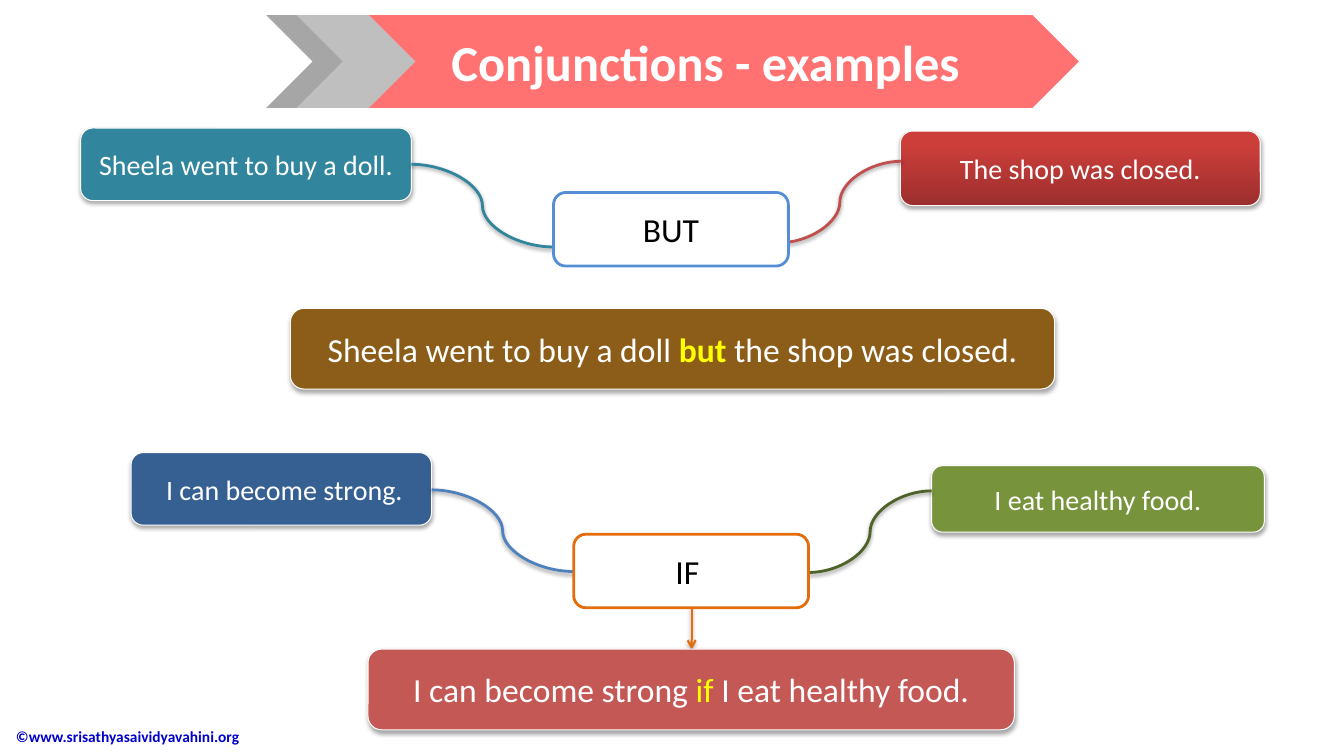
from lxml import etree
from pptx import Presentation
from pptx import util as u
from pptx.dml import color
from pptx.enum import shapes, text
from pptx.oxml import ns

COLORS = {
    "white": "FFFFFF", "black": "000000", "yellow": "FFFF00", "navy": "0000CC",
    "teal": "31859C", "red": "C0504D", "deep_red": "9C2F2D", "bright_red": "CB3E3A",
    "brown": "8C5D18", "sky": "558ED5", "dark_blue": "376092", "blue": "4F81BD",
    "green": "77933C", "dark_green": "4F6228", "orange": "E46C0A", "rose": "C35855",
    "coral": "FF7271", "gray": "A6A6A6", "light_gray": "BFBFBF",
}


class ExampleSlide:
    """Draws the elements of a conjunction slide in one shared style."""

    font_name = "Calibri"

    def __init__(self, presentation):
        self.slide = presentation.slides.add_slide(presentation.slide_layouts[6])

    def rgb(self, name):
        return color.RGBColor.from_string(COLORS[name])

    def shadow(self, element, opacity=35, distance=1.8):
        properties = element._element.spPr
        effects = properties.find(ns.qn("a:effectLst"))
        if effects is None:
            effects = etree.SubElement(properties, ns.qn("a:effectLst"))
        outer = etree.SubElement(effects, ns.qn("a:outerShdw"), {
            "blurRad": str(u.Pt(3.1)), "dist": str(u.Pt(distance)),
            "dir": "5400000", "rotWithShape": "0"})
        tint = etree.SubElement(outer, ns.qn("a:srgbClr"), val=COLORS["black"])
        etree.SubElement(tint, ns.qn("a:alpha"), val=str(opacity * 1000))

    def label(self, shape, runs, align=text.PP_ALIGN.CENTER, **formats):
        frame = shape.text_frame
        frame.word_wrap = True
        frame.vertical_anchor = text.MSO_ANCHOR.MIDDLE
        paragraph = frame.paragraphs[0]
        paragraph.alignment = align
        for content, changes in runs:
            run = paragraph.add_run()
            run.text = content
            values = {"name": self.font_name, "bold": False, "color": "white", **formats, **changes}
            run.font.color.rgb = self.rgb(values.pop("color"))
            for key, value in values.items():
                setattr(run.font, key, value)

    def block(self, kind, box, fill):
        shape = self.slide.shapes.add_shape(kind, *map(u.Inches, box))
        shape.shadow.inherit = False
        shape.fill.solid()
        shape.fill.fore_color.rgb = self.rgb(fill)
        shape.line.fill.background()
        return shape

    def outline(self, shape, name, width):
        shape.line.color.rgb = self.rgb(name)
        shape.line.width = u.Pt(width)

    def card(self, box, fill, runs, size):
        shape = self.block(shapes.MSO_SHAPE.ROUNDED_RECTANGLE, box, fill)
        self.outline(shape, "white", 0.75)
        self.shadow(shape)
        self.label(shape, runs, size=u.Pt(size))
        return shape

    def clause(self, box, fill, words):
        return self.card(box, fill, [(words, {})], 20)

    def sentence(self, box, fill, start, joiner, end, bold=False):
        return self.card(box, fill, [
            (start, {}), (joiner, {"color": "yellow", "bold": bold}), (end, {})], 24)

    def conjunction(self, left, top, border, word):
        shape = self.block(shapes.MSO_SHAPE.ROUNDED_RECTANGLE, (left, top, 2.33, 0.73), "white")
        self.outline(shape, border, 2)
        self.label(shape, [(word, {})], size=u.Pt(24), color="black")

    def link(self, kind, ends, name, width, opacity, distance):
        connector = self.slide.shapes.add_connector(kind, *map(u.Inches, ends))
        self.outline(connector, name, width)
        self.shadow(connector, opacity, distance)
        return connector

    def curve(self, ends, name):
        self.link(shapes.MSO_CONNECTOR.CURVE, ends, name, 2, 38, 1.6)

    def arrow(self, ends, name):
        connector = self.link(shapes.MSO_CONNECTOR.STRAIGHT, ends, name, 1.5, 35, 1.8)
        outline = connector._element.spPr.find(ns.qn("a:ln"))
        etree.SubElement(outline, ns.qn("a:tailEnd"), type="arrow")

    def gradient(self, shape, bottom, top):
        shape.fill.gradient()
        shape.fill.gradient_angle = 90
        for stop, position, name in zip(shape.fill.gradient_stops, (0, 0.8), (bottom, top)):
            stop.position = position
            stop.color.rgb = self.rgb(name)

    def banner(self, title):
        kinds = shapes.MSO_SHAPE
        self.block(kinds.CHEVRON, (2.64, 0.15, 1.18, 0.92), "gray")
        plate = self.block(kinds.PENTAGON, (3.53, 0.15, 7.17, 0.92), "coral")
        self.label(plate, [(title, {})], size=u.Pt(36), bold=True)
        self.block(kinds.CHEVRON, (2.94, 0.15, 1.18, 0.92), "light_gray")

    def footer(self, words):
        box = self.slide.shapes.add_textbox(*map(u.Inches, (0.06, 7.1, 3.53, 0.41)))
        self.label(box, [(words, {})], text.PP_ALIGN.LEFT, size=u.Pt(11), bold=True, color="navy")


def main():
    presentation = Presentation()
    presentation.slide_width = u.Inches(13.33)
    presentation.slide_height = u.Inches(7.5)
    slide = ExampleSlide(presentation)
    slide.footer("©www.srisathyasaividyavahini.org")

    slide.clause((0.8, 1.27, 3.28, 0.72), "teal", "Sheela went to buy a doll.")
    slide.curve((4.08, 1.63, 5.49, 2.45), "teal")
    closed = slide.clause((8.93, 1.3, 3.57, 0.74), "bright_red", "The shop was closed.")
    slide.gradient(closed, "deep_red", "bright_red")
    slide.curve((7.72, 2.41, 8.94, 1.6), "red")
    slide.sentence((2.88, 3.06, 7.58, 0.8), "brown",
                   "Sheela went to buy a doll ", "but ", "the shop was closed.", bold=True)
    slide.conjunction(5.49, 1.91, "sky", "BUT")

    slide.clause((1.3, 4.49, 2.98, 0.72), "dark_blue", " I can become strong.")
    slide.curve((4.28, 4.86, 5.69, 5.67), "blue")
    slide.clause((9.24, 4.62, 3.3, 0.66), "green", "I eat healthy food.")
    slide.curve((8.02, 5.68, 9.24, 4.87), "dark_green")
    slide.arrow((6.86, 6.03, 6.86, 6.44), "orange")
    slide.sentence((3.65, 6.44, 6.41, 0.8), "rose",
                   "I can become strong ", "if ", "I eat healthy food.")
    slide.conjunction(5.69, 5.3, "orange", "IF ")

    slide.banner("Conjunctions - examples")
    presentation.save("out.pptx")


if __name__ == "__main__":
    main()
